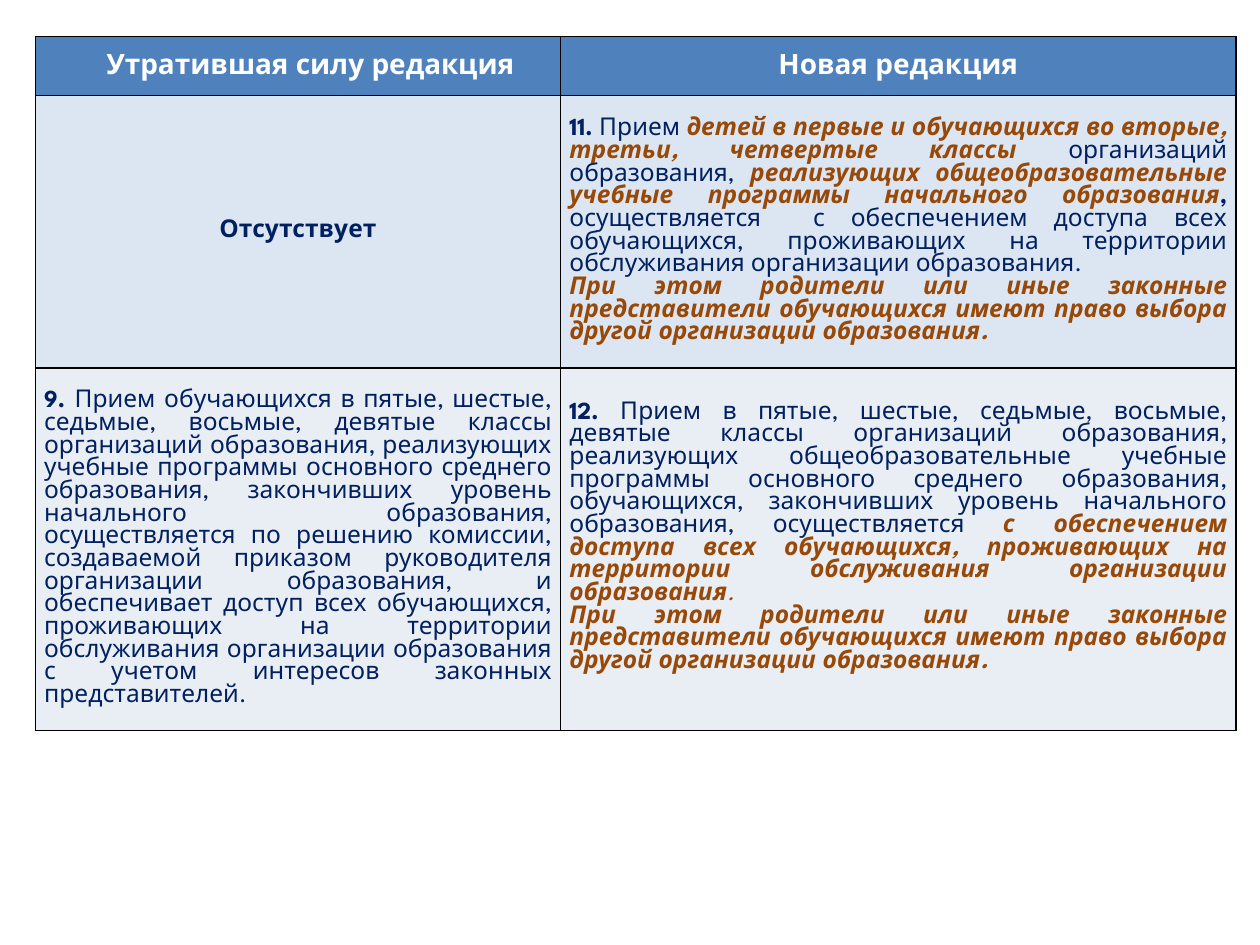
import pptx
import pptx.util
import pptx.dml.color
import pptx.enum.text
import pptx.oxml
import pptx.oxml.ns
from lxml import etree

Inches = pptx.util.Inches
Align = pptx.enum.text.PP_ALIGN
NAVY, BROWN, WHITE = "002060", "984807", "FFFFFF"


def color(code):
    return pptx.dml.color.RGBColor.from_string(code)


def write(par, text, size=14, code=NAVY, bold=False, italic=False):
    run = par.add_run()
    run.text = text
    font = run.font
    font.name, font.size = "League Spartan", pptx.util.Pt(size)
    font.bold, font.italic = bold, italic
    font.color.rgb = color(code)


# Run formats
head = dict(size=16, code=WHITE, bold=True)
plain = dict()
bold = dict(bold=True)
new = dict(code=BROWN, bold=True, italic=True)
dot = dict(code=BROWN, italic=True)

choice = [("При этом родители или иные законные представители обучающихся "
           "имеют право выбора другой организации образования.", new)]

# Each cell is a list of paragraphs, each paragraph a list of runs
rows = [
    [[[("Утратившая силу редакция", head)]], [[("Новая редакция", head)]]],
    [
        [[("Отсутствует", bold)]],
        [[("11.", bold), (" Прием ", plain),
          ("детей в первые и обучающихся во вторые, третьи, "
           "четвертые классы ", new),
          ("организаций образования, ", plain),
          ("реализующих общеобразовательные учебные программы "
           "начального образования", new),
          (",", bold),
          (" осуществляется  с обеспечением доступа всех обучающихся, "
           "проживающих на территории обслуживания организации "
           "образования.", plain)],
         choice],
    ],
    [
        [[("9. ", bold),
          ("Прием обучающихся в пятые, шестые, седьмые, восьмые, девятые "
           "классы организаций образования, реализующих учебные программы "
           "основного среднего образования, закончивших уровень начального "
           "образования, осуществляется по решению комиссии, создаваемой "
           "приказом руководителя организации образования, и обеспечивает "
           "доступ всех обучающихся, проживающих на территории обслуживания "
           "организации образования с учетом интересов законных "
           "представителей.", plain)]],
        [[("12.", bold),
          (" Прием в пятые, шестые, седьмые, восьмые, девятые классы "
           "организаций образования, реализующих общеобразовательные учебные "
           "программы основного среднего образования, обучающихся, "
           "закончивших уровень начального образования, "
           "осуществляется ", plain),
          ("с обеспечением доступа всех обучающихся, проживающих на "
           "территории обслуживания организации образования", new),
          (".", dot)],
         choice],
    ],
]
widths = [4.17, 5.36]
heights = [0.47, 2.16, 2.88]
fills = ["4F81BD", "DCE6F2", "E9EDF4"]

deck = pptx.Presentation()
deck.slide_width, deck.slide_height = Inches(10), Inches(7.5)
slide = deck.slides.add_slide(deck.slide_layouts[6])

# Table grid
table = slide.shapes.add_table(
    len(rows), len(widths), Inches(0.28), Inches(0.29),
    Inches(sum(widths)), Inches(sum(heights))).table
for col, width in zip(table.columns, widths):
    col.width = Inches(width)
for row, height in zip(table.rows, heights):
    row.height = Inches(height)

# Cells
for r, row in enumerate(rows):
    for c, pars in enumerate(row):
        cell = table.cell(r, c)
        cell.vertical_anchor = pptx.enum.text.MSO_ANCHOR.MIDDLE
        cell.margin_left = cell.margin_right = Inches(0.07)
        cell.margin_top = cell.margin_bottom = 0

        # Borders come before the fill in the cell properties
        props = cell._tc.get_or_add_tcPr()
        for side in ("a:lnL", "a:lnR", "a:lnT", "a:lnB"):
            line = etree.SubElement(props, pptx.oxml.ns.qn(side), w="12700")
            solid = etree.SubElement(line, pptx.oxml.ns.qn("a:solidFill"))
            etree.SubElement(solid, pptx.oxml.ns.qn("a:srgbClr"), val="000000")
        cell.fill.solid()
        cell.fill.fore_color.rgb = color(fills[r])

        frame = cell.text_frame
        for i, runs in enumerate(pars):
            par = frame.add_paragraph() if i else frame.paragraphs[0]
            single = r == 0 or (r, c) == (1, 0)
            par.alignment = Align.CENTER if single else Align.JUSTIFY
            if r == 0:
                par.line_spacing = 1.15
            for text, style in runs:
                write(par, text, **style)

# The left heading is indented, the last cell sits a little higher
indent = table.cell(0, 0).text_frame.paragraphs[0]._p.get_or_add_pPr()
indent.set("indent", str(Inches(0.2)))
table.cell(2, 1).margin_bottom = Inches(0.18)

deck.save("out.pptx")
